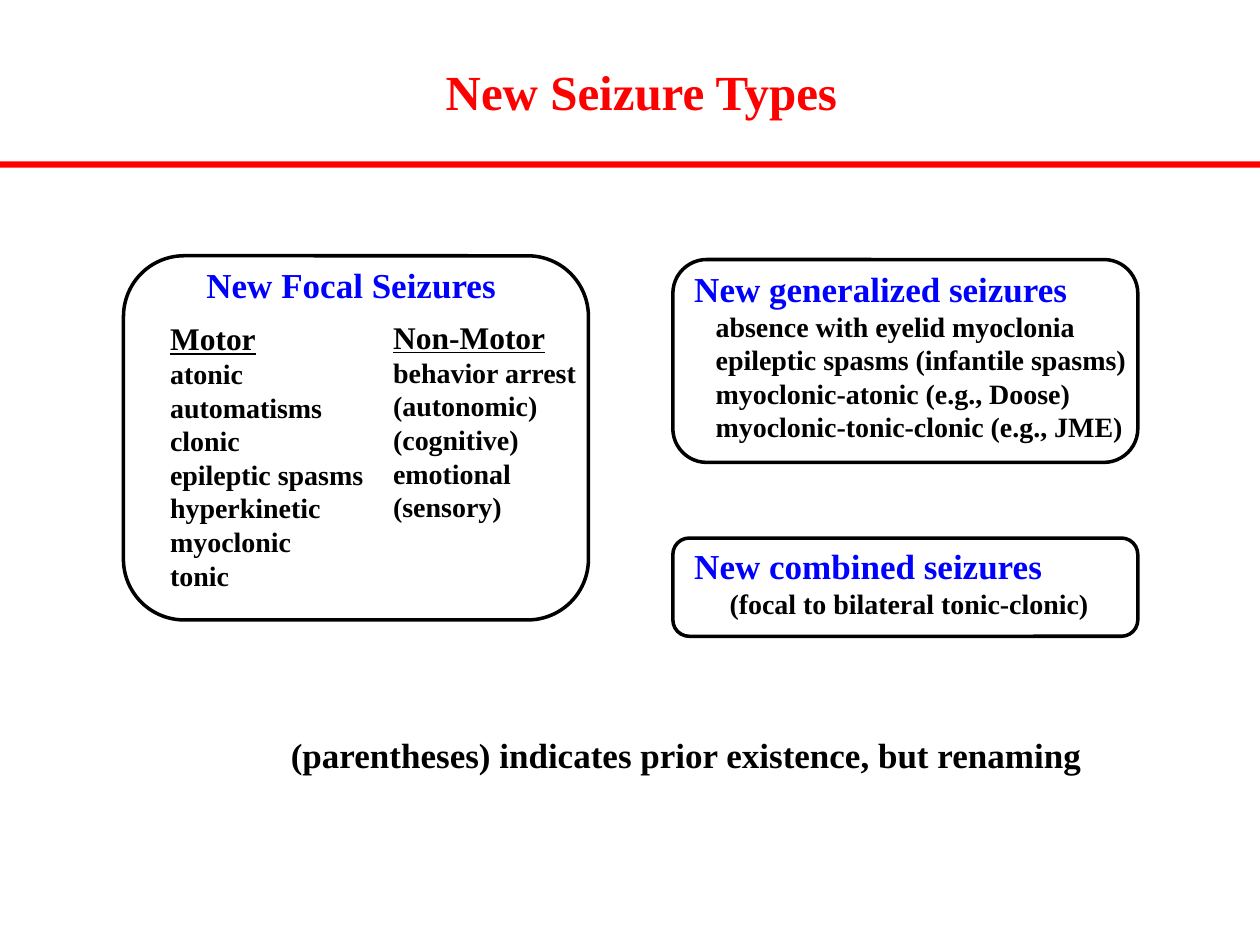
"""Build a slide that lists the new seizure types."""
from pptx import Presentation
from pptx.dml.color import RGBColor
from pptx.enum.shapes import MSO_SHAPE
from pptx.enum.text import MSO_ANCHOR, MSO_AUTO_SIZE, PP_ALIGN
from pptx.oxml.xmlchemy import OxmlElement
from pptx.util import Inches, Pt

COLORS = {"red": "FF0000", "blue": "0000FF", "black": "000000"}
FONT = "Times New Roman"


class SlideBuilder:
    """Hold the style and the current slide."""

    def __init__(self, prs, layout):
        """Add a slide with the given layout."""
        self.s = prs.slides.add_slide(prs.slide_layouts[layout])

    def place(self, sp, at):
        """Move a shape and prepare its text frame."""
        sp.left, sp.top, sp.width, sp.height = (Inches(v) for v in at)
        tf = sp.text_frame
        tf.word_wrap = True
        tf.auto_size = MSO_AUTO_SIZE.NONE
        tf.vertical_anchor = MSO_ANCHOR.TOP
        return tf

    def line(self, p, text, size, color="black", underline=False, indent=0,
             align=PP_ALIGN.LEFT):
        """Write one unbulleted paragraph."""
        p.alignment = align
        p.space_before = Pt(0)
        pPr = p._p.get_or_add_pPr()
        pPr.set("marL", str(Inches(indent)))
        pPr.set("indent", "0")
        pPr.append(OxmlElement("a:buNone"))
        r = p.add_run()
        r.text = text
        r.font.name, r.font.size, r.font.bold = FONT, Pt(size), True
        r.font.underline = underline
        r.font.color.rgb = RGBColor.from_string(COLORS[color])

    def title(self, text, at):
        """Fill the title placeholder."""
        tf = self.place(self.s.shapes.title, at)
        self.line(tf.paragraphs[0], text, 28, "red", align=PP_ALIGN.CENTER)

    def list(self, idx, at, heading, items, size=18, color="black",
             underline=False, indent=0):
        """Fill a body placeholder with a heading and its items."""
        tf = self.place(self.s.placeholders[idx], at)
        self.line(tf.paragraphs[0], heading, size, color, underline)
        for item in items:
            self.line(tf.add_paragraph(), item, 16, indent=indent)

    def label(self, text, at, color="black"):
        """Add a single line of text."""
        tf = self.place(self.s.shapes.add_textbox(0, 0, 0, 0), at)
        self.line(tf.paragraphs[0], text, 20, color)

    def shape(self, kind, at):
        """Add a preset shape without a shadow."""
        sp = self.s.shapes.add_shape(kind, *(Inches(v) for v in at))
        sp.shadow.inherit = False
        return sp

    def rule(self, at):
        """Add the red bar under the title."""
        sp = self.shape(MSO_SHAPE.RECTANGLE, at)
        sp.fill.solid()
        sp.fill.fore_color.rgb = RGBColor.from_string(COLORS["red"])
        sp.line.fill.background()

    def frame(self, at):
        """Add a rounded outline."""
        sp = self.shape(MSO_SHAPE.ROUNDED_RECTANGLE, at)
        sp.fill.background()
        sp.line.color.rgb = RGBColor.from_string(COLORS["black"])
        sp.line.width = Pt(2)


def main():
    """Build and save the slide."""
    prs = Presentation()
    prs.slide_width, prs.slide_height = Inches(10), Inches(7.5)
    b = SlideBuilder(prs, 4)

    b.title("New Seizure Types", (3.29, 0.44, 3.6, 0.57))
    b.rule((0, 1.28, 10, 0.05))

    for at in ((0.98, 2.03, 3.69, 2.89), (5.34, 2.06, 3.69, 1.61),
               (5.34, 4.27, 3.69, 0.78)):
        b.frame(at)

    b.label("New Focal Seizures", (1.54, 2.04, 2.6, 0.44), "blue")
    b.list(1, (1.25, 2.48, 1.76, 2.29), "Motor",
           ["atonic", "automatisms", "clonic", "epileptic spasms",
            "hyperkinetic", "myoclonic", "tonic"], underline=True)
    b.list(2, (3.02, 2.47, 1.72, 1.75), "Non-Motor",
           ["behavior arrest", "(autonomic)", "(cognitive)", "emotional",
            "(sensory)"], underline=True)
    b.list(3, (5.41, 2.07, 3.75, 1.51), "New generalized seizures",
           ["absence with eyelid myoclonia",
            "epileptic spasms (infantile spasms)",
            "myoclonic-atonic (e.g., Doose)",
            "myoclonic-tonic-clonic (e.g., JME)"],
           size=20, color="blue", indent=0.17)
    b.list(4, (5.41, 4.27, 3.5, 0.71), "New combined seizures",
           ["(focal to bilateral tonic-clonic)"],
           size=20, color="blue", indent=0.28)

    b.label("(parentheses) indicates prior existence, but renaming",
            (2.21, 5.77, 6.6, 0.44))
    prs.save("out.pptx")


if __name__ == "__main__":
    main()
